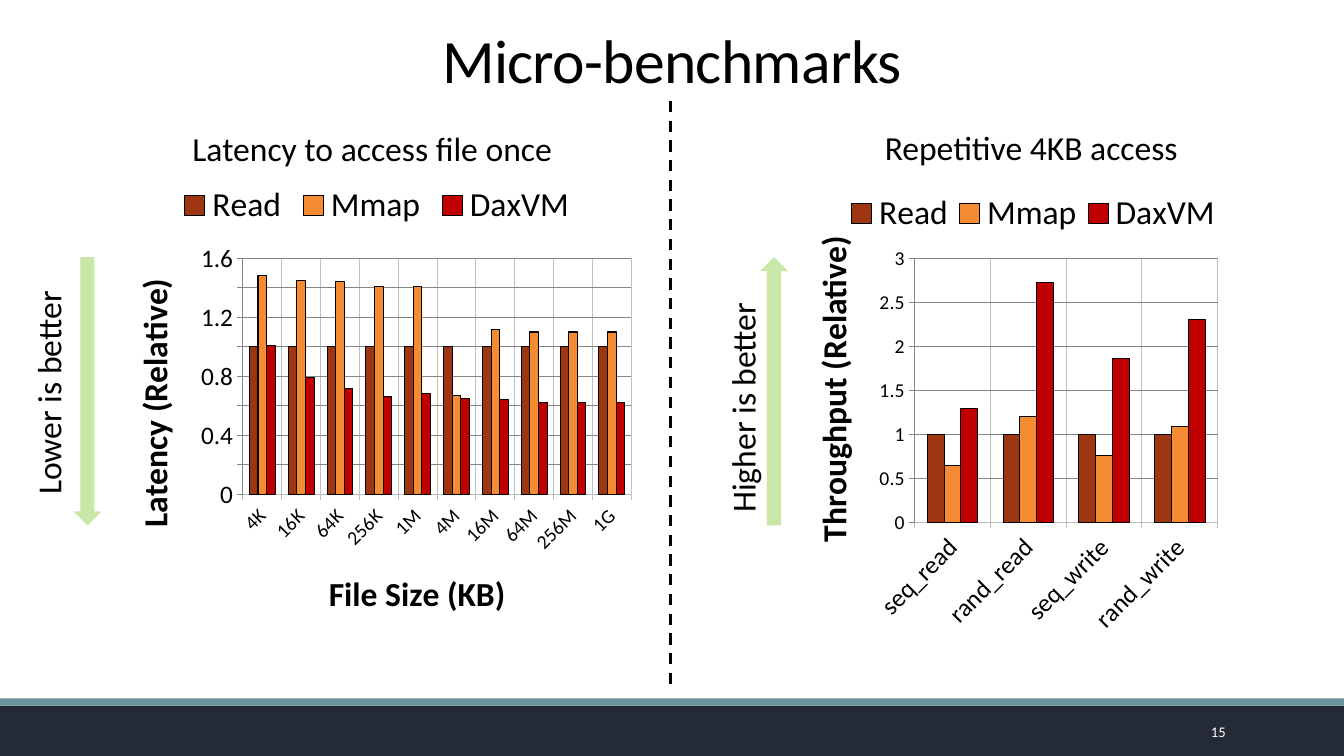
from lxml import etree
from pptx import Presentation, util as u
from pptx.chart.data import CategoryChartData
from pptx.dml.color import RGBColor
from pptx.enum import chart as charts, dml, shapes, text
from pptx.oxml.ns import qn


def paint(format, color):
    format.solid()
    format.fore_color.rgb = RGBColor.from_string(color)


def place(element, index, **fractions):
    layout = element.find(qn("c:layout"))
    if layout is None:
        layout = etree.Element(qn("c:layout"))
        element.insert(index, layout)
    manual = etree.SubElement(layout, qn("c:manualLayout"))
    if element.tag == qn("c:plotArea"):
        etree.SubElement(manual, qn("c:layoutTarget"), val="inner")
    for name in ("x", "y"):
        etree.SubElement(manual, qn(f"c:{name}Mode"), val="edge")
    for name, value in fractions.items():
        etree.SubElement(manual, qn(f"c:{name}"), val=str(value))


presentation = Presentation()
presentation.slide_width = u.Cm(33.87)
presentation.slide_height = u.Cm(19.05)
slide = presentation.slides.add_slide(presentation.slide_layouts[6])

RECTANGLE = shapes.MSO_SHAPE.RECTANGLE
ARROW = shapes.MSO_SHAPE.DOWN_ARROW
for preset, left, top, width, height, rotation, color in [
    (RECTANGLE, 0, 17.78, 33.87, 1.27, 0, "242B37"),
    (RECTANGLE, 0, 17.6, 33.87, 0.18, 0, "6D939E"),
    (ARROW, 1.85, 6.48, 0.71, 6.76, 0, "C9E7A7"),
    (ARROW, 19.15, 6.48, 0.71, 6.76, 180, "C9E7A7"),
]:
    shape = slide.shapes.add_shape(preset, u.Cm(left), u.Cm(top), u.Cm(width), u.Cm(height))
    shape.rotation = rotation
    shape.shadow.inherit = False
    paint(shape.fill, color)
    shape.line.fill.background()

divider = slide.shapes.add_connector(
    shapes.MSO_CONNECTOR.STRAIGHT, u.Cm(16.89), u.Cm(2.54), u.Cm(16.89), u.Cm(17.35))
paint(divider.line.fill, "000000")
divider.line.width = u.Pt(2)
divider.line.dash_style = dml.MSO_LINE.DASH
etree.SubElement(divider._element.spPr, qn("a:effectLst"))

sizes = ["4K", "16K", "64K", "256K", "1M", "4M", "16M", "64M", "256M", "1G"]
latency = {
    "Read": [1] * 10,
    "Mmap": [1.48, 1.45, 1.44, 1.41, 1.41, 0.67, 1.12, 1.1, 1.1, 1.1],
    "DaxVM": [1.01, 0.79, 0.72, 0.66, 0.68, 0.65, 0.64, 0.62, 0.62, 0.62],
}
patterns = ["seq_read", "rand_read", "seq_write", "rand_write"]
throughput = {
    "Read": [1] * 4,
    "Mmap": [0.65, 1.2, 0.76, 1.09],
    "DaxVM": [1.29, 2.73, 1.86, 2.3],
}
for left, width, categories, values, titles, fonts, top, step, plot, legend, spots in [
    (2.77, 13.41, sizes, latency, ("File Size (KB)", "Latency (Relative)"), (14, 18),
     1.6, 0.2, dict(x=0.25, y=0.18, w=0.73, h=0.5), dict(x=0.12, y=0.01),
     (dict(x=0.4, y=0.83), dict(x=0.03, y=0.21))),
    (19.84, 11.07, patterns, throughput, (None, "Throughput (Relative)"), (18, 14),
     3, 0.5, dict(x=0.29, y=0.18, w=0.69, h=0.56), dict(x=0.12, y=0.03, w=0.88, h=0.11),
     (None, dict(x=0.04, y=0.12))),
]:
    data = CategoryChartData()
    data.categories = categories
    for name, numbers in values.items():
        data.add_series(name, numbers)
    chart = slide.shapes.add_chart(
        charts.XL_CHART_TYPE.COLUMN_CLUSTERED,
        u.Cm(left), u.Cm(4.37), u.Cm(width), u.Cm(11.89), data).chart
    chart.has_title = False
    chart.font.name = "Calibri"
    chart.font.size = u.Pt(10)
    paint(chart.font.fill, "000000")
    chart.has_legend = True
    chart.legend.position = charts.XL_LEGEND_POSITION.TOP
    chart.legend.include_in_layout = False
    chart.legend.font.size = u.Pt(24)
    place(chart.legend._element, 1, **legend)
    place(chart.plots[0]._element.getparent(), 0, **plot)
    chart.plots[0].gap_width = 150
    chart.plots[0].overlap = 0
    chart.plots[0].vary_by_categories = False
    for series, color in zip(chart.plots[0].series, ("9E3611", "F58B33", "C00000")):
        paint(series.format.fill, color)
        paint(series.format.line.fill, "000000")
        series.format.line.width = u.Pt(0.75)
    axes = (chart.category_axis, chart.value_axis)
    for axis, title, size, spot, grid in zip(axes, titles, fonts, spots, ("BFBFBF", "868686")):
        axis.tick_labels.font.size = u.Pt(size)
        axis.major_tick_mark = charts.XL_TICK_MARK.OUTSIDE
        axis.has_major_gridlines = True
        for line in (axis.major_gridlines.format.line, axis.format.line):
            paint(line.fill, grid)
            line.width = u.Pt(0.75)
        axis.has_title = title is not None
        if title:
            axis.axis_title.text_frame.text = title
            paragraph = axis.axis_title.text_frame.paragraphs[0]
            paragraph.font.size = u.Pt(24)
            paragraph.font.bold = True
            place(axis.axis_title._element, 1, **spot)
    chart.category_axis._element.find(qn("c:txPr")).find(qn("a:bodyPr")).set("rot", "-2700000")
    chart.value_axis.minimum_scale = 0
    chart.value_axis.maximum_scale = top
    chart.value_axis.major_unit = step
    chart.value_axis.tick_labels.number_format = "General"
    chart.value_axis.tick_labels.number_format_is_linked = False

CENTER, LEFT, RIGHT = text.PP_ALIGN.CENTER, text.PP_ALIGN.LEFT, text.PP_ALIGN.RIGHT
MIDDLE, TOP, BOTTOM = text.MSO_ANCHOR.MIDDLE, text.MSO_ANCHOR.TOP, text.MSO_ANCHOR.BOTTOM
for words, left, top, width, height, size, color, align, anchor, rotation in [
    ("Micro-benchmarks", 0, 0.03, 33.87, 2.51, 44, "000000", CENTER, BOTTOM, 0),
    ("Latency to access file once", -1.02, 3.1, 20.8, 1.27, 24, "000000", CENTER, TOP, 0),
    ("Repetitive 4KB access", 21.67, 3.07, 8.64, 1.27, 24, "000000", CENTER, TOP, 0),
    ("Lower is better", -1.65, 9.22, 5.72, 1.27, 24, "000000", LEFT, TOP, 270),
    ("Higher is better", 15.77, 9.6, 5.87, 1.27, 24, "000000", LEFT, TOP, 270),
    ("15", 27.51, 17.93, 3.63, 1.02, 10.5, "FFFFFF", RIGHT, MIDDLE, 0),
]:
    shape = slide.shapes.add_textbox(u.Cm(left), u.Cm(top), u.Cm(width), u.Cm(height))
    shape.rotation = rotation
    frame = shape.text_frame
    frame.word_wrap = rotation == 0
    frame.vertical_anchor = anchor
    paragraph = frame.paragraphs[0]
    paragraph.alignment = align
    run = paragraph.add_run()
    run.text = words
    paragraph.font.name = "Calibri"
    paragraph.font.size = u.Pt(size)
    paint(paragraph.font.fill, color)
    if size == 44:
        paragraph.line_spacing = 0.85
        run.font._element.set("spc", "-50")

presentation.save("out.pptx")
